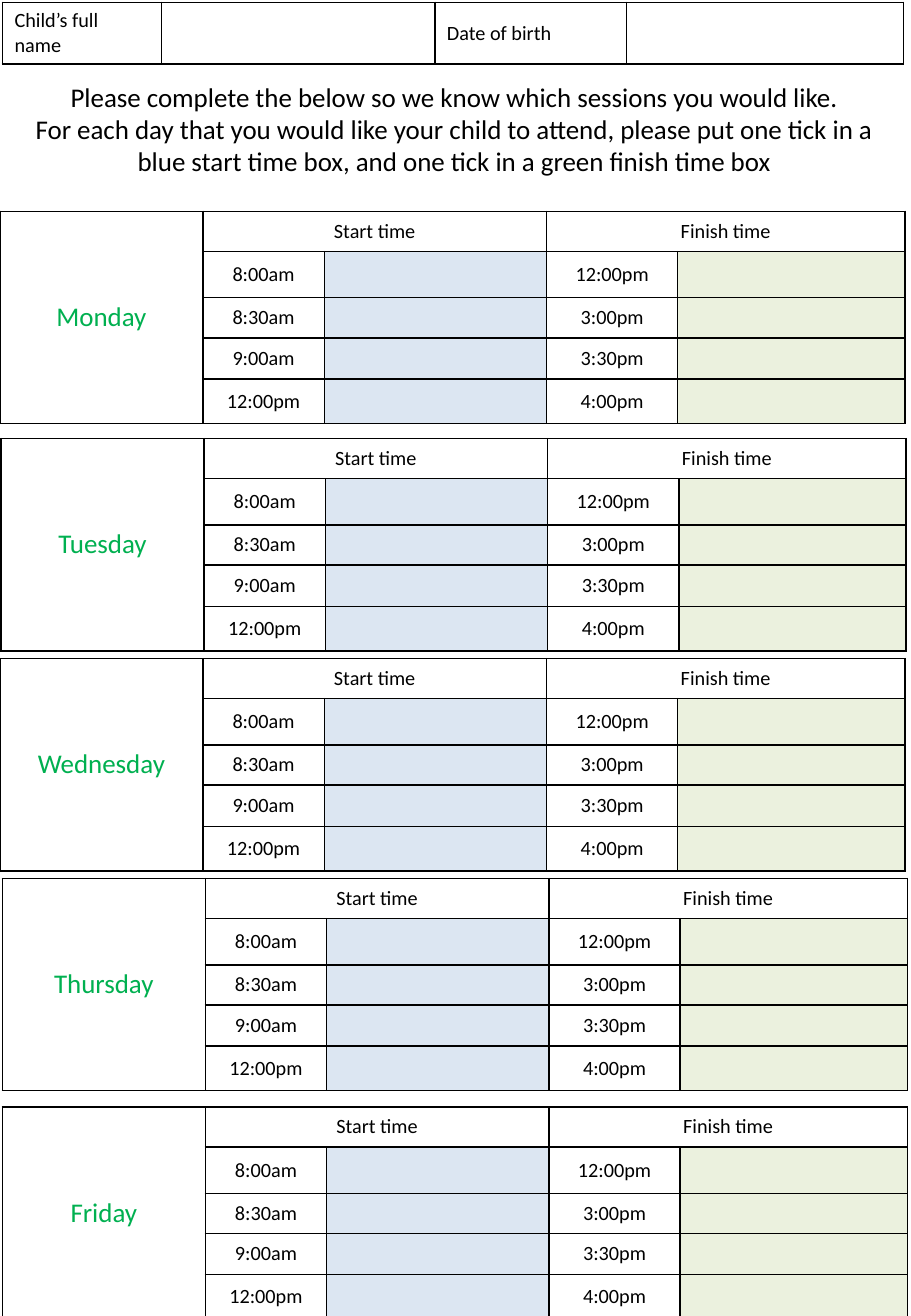
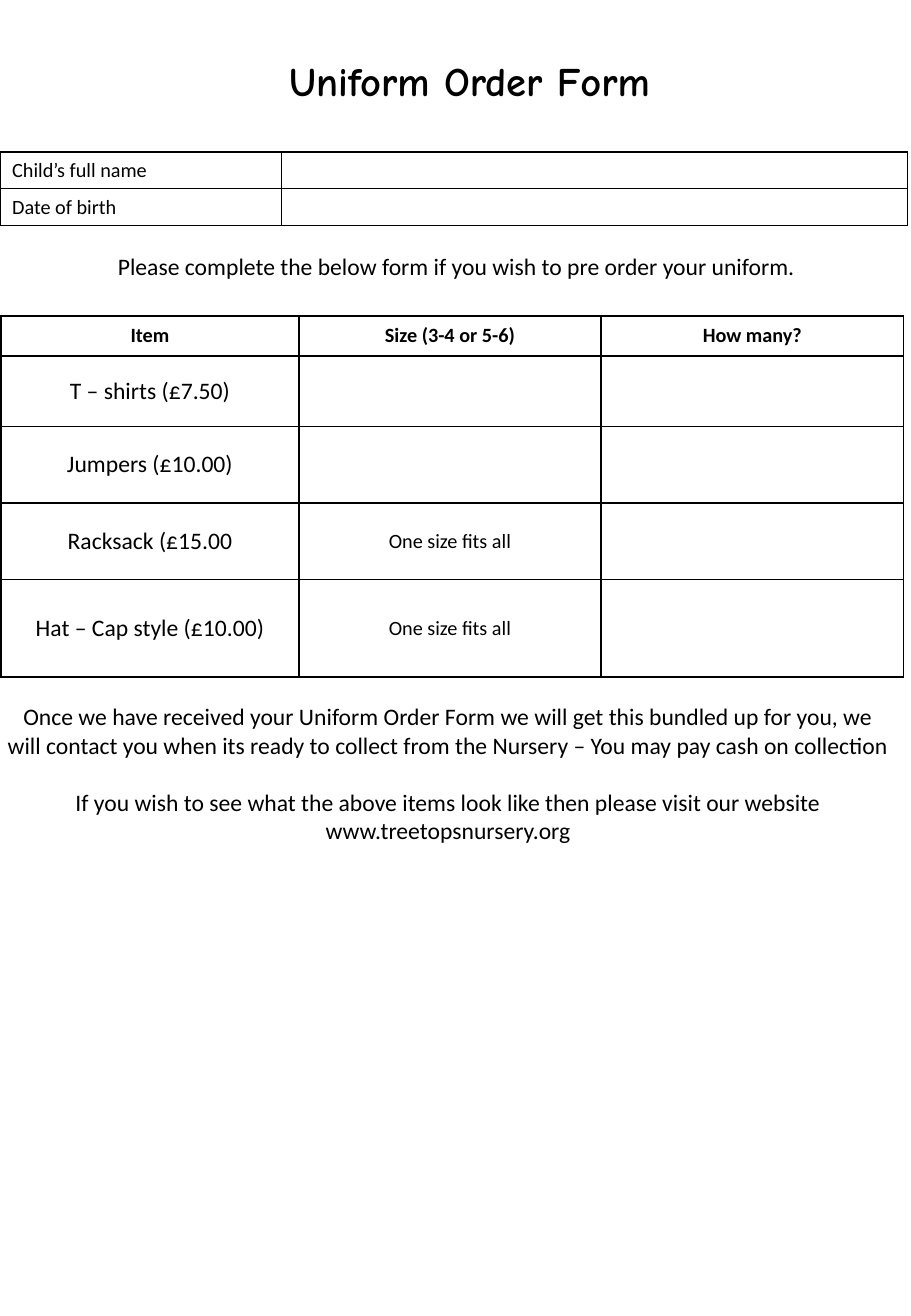
from dataclasses import dataclass

from lxml import etree
from pptx import Presentation
from pptx.dml.color import RGBColor
from pptx.enum.text import MSO_ANCHOR, MSO_AUTO_SIZE, PP_ALIGN
from pptx.oxml.ns import qn
from pptx.util import Inches, Pt

LEFT, CENTER = PP_ALIGN.LEFT, PP_ALIGN.CENTER
TOP, MIDDLE = MSO_ANCHOR.TOP, MSO_ANCHOR.MIDDLE
NO_AUTOFIT = MSO_AUTO_SIZE.NONE
TITLE_ONLY, BLANK = 5, 6


@dataclass(frozen=True)
class Theme:
    text: str = "000000"
    border: str = "000000"
    day: str = "00B050"
    start: str = "DCE6F2"
    finish: str = "EBF1DE"
    body_font: str = "Calibri"
    title_font: str = "Comic Neue"
    title_size: int = 24
    heading_size: int = 16
    body_size: int = 14
    cell_size: int = 12
    border_width: int = 1


class Form:
    def __init__(self, presentation, theme):
        self.presentation = presentation
        self.theme = theme
        self.slide = None

    def add_slide(self, layout):
        layouts = self.presentation.slide_layouts
        self.slide = self.presentation.slides.add_slide(layouts[layout])

    def format(self, paragraph, size, alignment=CENTER, color=None, bold=False, font=None):
        paragraph.alignment = alignment
        paragraph.font.name = font or self.theme.body_font
        paragraph.font.size = Pt(size)
        paragraph.font.bold = bold
        paragraph.font.color.rgb = RGBColor.from_string(color or self.theme.text)

    def title(self, left, top, width, height, text):
        shape = self.slide.shapes.title
        shape.left, shape.top = Inches(left), Inches(top)
        shape.width, shape.height = Inches(width), Inches(height)
        frame = shape.text_frame
        frame.text = text
        frame.word_wrap = True
        frame.auto_size = NO_AUTOFIT
        self.format(frame.paragraphs[0], self.theme.title_size, bold=True,
                    font=self.theme.title_font)

    def text(self, left, top, width, height, lines, size, gap=0):
        shape = self.slide.shapes.add_textbox(
            Inches(left), Inches(top), Inches(width), Inches(height))
        frame = shape.text_frame
        frame.word_wrap = True
        frame.vertical_anchor = TOP
        for index, line in enumerate(lines):
            paragraph = frame.paragraphs[0] if index == 0 else frame.add_paragraph()
            paragraph.text = line
            self.format(paragraph, size)
            if index and gap:
                paragraph.space_before = Pt(gap)

    def border(self, cell):
        properties = cell._tc.get_or_add_tcPr()
        for side in ("a:lnL", "a:lnR", "a:lnT", "a:lnB"):
            line = etree.SubElement(properties, qn(side), w=str(Pt(self.theme.border_width)))
            fill = etree.SubElement(line, qn("a:solidFill"))
            etree.SubElement(fill, qn("a:srgbClr"), val=self.theme.border)

    def shade(self, cell, color):
        cell.fill.solid()
        cell.fill.fore_color.rgb = RGBColor.from_string(color)

    def table(self, left, top, widths, heights, rows, alignment=CENTER):
        table = self.slide.shapes.add_table(
            len(heights), len(widths), Inches(left), Inches(top),
            Inches(sum(widths)), Inches(sum(heights))).table
        table.first_row = table.horz_banding = False
        for column, width in zip(table.columns, widths):
            column.width = Inches(width)
        for row, height, texts in zip(table.rows, heights, rows):
            row.height = Inches(height)
            for cell, text in zip(row.cells, texts):
                self.border(cell)
                cell.fill.background()
                cell.vertical_anchor = MIDDLE
                cell.text = text
                self.format(cell.text_frame.paragraphs[0], self.theme.cell_size, alignment)
                if not text:
                    cell.margin_top = cell.margin_bottom = 0
        return table

    def day(self, left, top, name):
        times = (("8:00am", "12:00pm"), ("8:30am", "3:00pm"),
                 ("9:00am", "3:30pm"), ("12:00pm", "4:00pm"))
        rows = [(name, "Start time", "", "Finish time", "")]
        rows += [("", start, "", finish, "") for start, finish in times]
        table = self.table(left, top, (1.67, 1, 1.83, 1.08, 1.87),
                           (0.33, 0.38, 0.33, 0.34, 0.36), rows)
        for row in range(1, len(rows)):
            self.shade(table.cell(row, 2), self.theme.start)
            self.shade(table.cell(row, 4), self.theme.finish)
        day_cell = table.cell(0, 0)
        self.format(day_cell.text_frame.paragraphs[0], self.theme.heading_size,
                    color=self.theme.day)
        day_cell.merge(table.cell(len(rows) - 1, 0))
        for column in (1, 3):
            table.cell(0, column).merge(table.cell(0, column + 1))


def build_sessions(form):
    form.add_slide(BLANK)
    form.table(0.02, 0.02, (1.31, 2.25, 1.58, 2.28), (0.3,),
               [("Child’s full name", "", "Date of birth", "")], LEFT)
    form.text(-0.01, 0.61, 7.5, 0.91, (
        "Please complete the below so we know which sessions you would like.",
        "For each day that you would like your child to attend, please put one tick "
        "in a blue start time box, and one tick in a green finish time box",
    ), form.theme.heading_size)
    for left, top, name in ((0, 1.74, "Monday"), (0.01, 3.61, "Tuesday"),
                            (0, 5.42, "Wednesday"), (0.02, 7.23, "Thursday"),
                            (0.02, 9.11, "Friday")):
        form.day(left, top, name)


def build_uniform(form):
    form.add_slide(TITLE_ONLY)
    form.title(1.7, 0.41, 4.33, 0.5, "Uniform Order Form")
    form.table(0, 1.25, (2.32, 5.15), (0.3, 0.3),
               [("Child’s full name", ""), ("Date of birth", "")], LEFT)
    form.text(0.01, 2.02, 7.5, 0.34,
              ("Please complete the below form if you wish to pre order your uniform.",),
              form.theme.body_size)
    orders = form.table(0.01, 2.6, (2.45, 2.49, 2.49), (0.33, 0.58, 0.63, 0.63, 0.8), [
        ("Item", "Size (3-4 or 5-6)", "How many?"),
        ("T – shirts (£7.50)", "", ""),
        ("Jumpers (£10.00)", "", ""),
        ("Racksack (£15.00", "One size fits all", ""),
        ("Hat – Cap style (£10.00)", "One size fits all", ""),
    ])
    for cell in orders.rows[0].cells:
        cell.text_frame.paragraphs[0].font.bold = True
    for row in range(1, len(orders.rows)):
        item = orders.cell(row, 0).text_frame.paragraphs[0]
        item.font.size = Pt(form.theme.body_size)
    form.text(-0.06, 5.73, 7.5, 1.75, (
        "Once we have received your Uniform Order Form we will get this bundled up for you, "
        "we will contact you when its ready to collect from the Nursery – "
        "You may pay cash on collection",
        "If you wish to see what the above items look like then please visit our website "
        "www.treetopsnursery.org",
    ), form.theme.body_size, gap=17)


def main():
    presentation = Presentation()
    presentation.slide_width = Inches(7.5)
    presentation.slide_height = Inches(10.83)
    form = Form(presentation, Theme())
    build_sessions(form)
    build_uniform(form)
    presentation.save("out.pptx")


if __name__ == "__main__":
    main()
